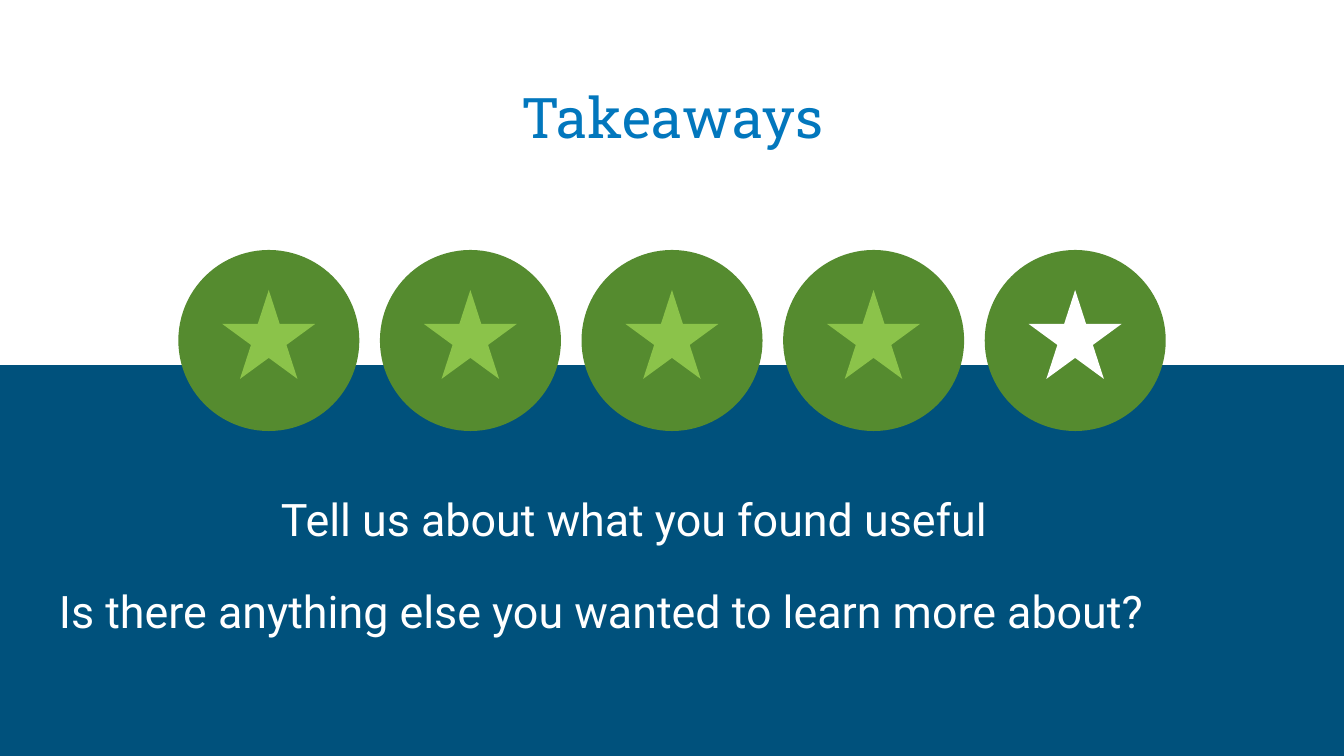
from pptx import Presentation
from pptx.dml.color import RGBColor
from pptx.enum.shapes import MSO_SHAPE as Preset
from pptx.enum.text import MSO_ANCHOR as Anchor, MSO_AUTO_SIZE as AutoSize, PP_ALIGN as Align
from pptx.util import Pt

TITLE = "Takeaways"
PROMPTS = [
    {"text": "Tell us about what you found useful", "indent": 222, "format": {"line_spacing": 1.15}},
    {
        "text": "Is there anything else you wanted to learn more about?",
        "indent": 0,
        "format": {"line_spacing": 1.15, "space_before": Pt(16), "space_after": Pt(16)},
    },
]
COLORS = {
    "navy": "00517C",
    "blue": "0277BD",
    "green": "558B2F",
    "lime": "8BC34A",
    "white": "FFFFFF",
}
RATING = ["lime", "lime", "lime", "lime", "white"]

SLIDE_W, SLIDE_H = 1344, 756
EMU_PER_PX = 914400 / 134.4
MARGIN, TEXT_W, INSET = 46, 1253, 13
BADGE, BADGE_TOP, BADGE_GAP = 181, 250, 20.6
STAR_W, STAR_H, STAR_TOP = 93, 89, 290


def px(length):
    return round(length * EMU_PER_PX)


def box(*lengths):
    return [px(length) for length in lengths]


def color(name):
    return RGBColor.from_string(COLORS[name])


def apply(target, values):
    for name, value in values.items():
        setattr(target, name, value)


def add_filled(shapes, preset, place, fill):
    shape = shapes.add_shape(preset, *box(*place))
    shape.shadow.inherit = False
    shape.fill.solid()
    shape.fill.fore_color.rgb = color(fill)
    shape.line.fill.background()
    return shape


def set_frame(frame, anchor):
    apply(frame, {"word_wrap": True, "auto_size": AutoSize.NONE, "vertical_anchor": anchor})
    apply(frame, {f"margin_{side}": px(INSET) for side in ("left", "top", "right", "bottom")})


def write(paragraph, text, font, size, fill):
    run = paragraph.add_run()
    run.text = text
    apply(run.font, {"name": font, "size": Pt(size), "bold": False})
    run.font.color.rgb = color(fill)


def main():
    deck = Presentation()
    apply(deck, {"slide_width": px(SLIDE_W), "slide_height": px(SLIDE_H)})
    slide = deck.slides.add_slide(deck.slide_layouts[5])
    slide.background.fill.solid()
    slide.background.fill.fore_color.rgb = color("navy")

    upper_band = add_filled(slide.shapes, Preset.RECTANGLE, (0, 0, 1347, 365), "white")
    title = slide.shapes.title
    upper_band._element.addnext(title._element)
    apply(title, dict(zip(("left", "top", "width", "height"), box(MARGIN, 55, TEXT_W, 108))))
    set_frame(title.text_frame, Anchor.BOTTOM)
    heading = title.text_frame.paragraphs[0]
    heading.alignment = Align.CENTER
    write(heading, TITLE, "Roboto Slab", 30, "blue")

    row_w = len(RATING) * (BADGE + BADGE_GAP) - BADGE_GAP
    for index, star_color in enumerate(RATING):
        left = (SLIDE_W - row_w) / 2 + index * (BADGE + BADGE_GAP)
        star_left = left + (BADGE - STAR_W) / 2
        badge = slide.shapes.add_group_shape().shapes
        add_filled(badge, Preset.OVAL, (left, BADGE_TOP, BADGE, BADGE), "green")
        add_filled(badge, Preset.STAR_5_POINT, (star_left, STAR_TOP, STAR_W, STAR_H), star_color)

    body = slide.shapes.add_textbox(*box(MARGIN, 471, TEXT_W, 236)).text_frame
    set_frame(body, Anchor.TOP)
    for index, prompt in enumerate(PROMPTS):
        paragraph = body.add_paragraph() if index else body.paragraphs[0]
        apply(paragraph, {"alignment": Align.LEFT, **prompt["format"]})
        paragraph._p.get_or_add_pPr().set("marL", str(px(prompt["indent"])))
        write(paragraph, prompt["text"], "Roboto", 24, "white")

    deck.save("out.pptx")


if __name__ == "__main__":
    main()
